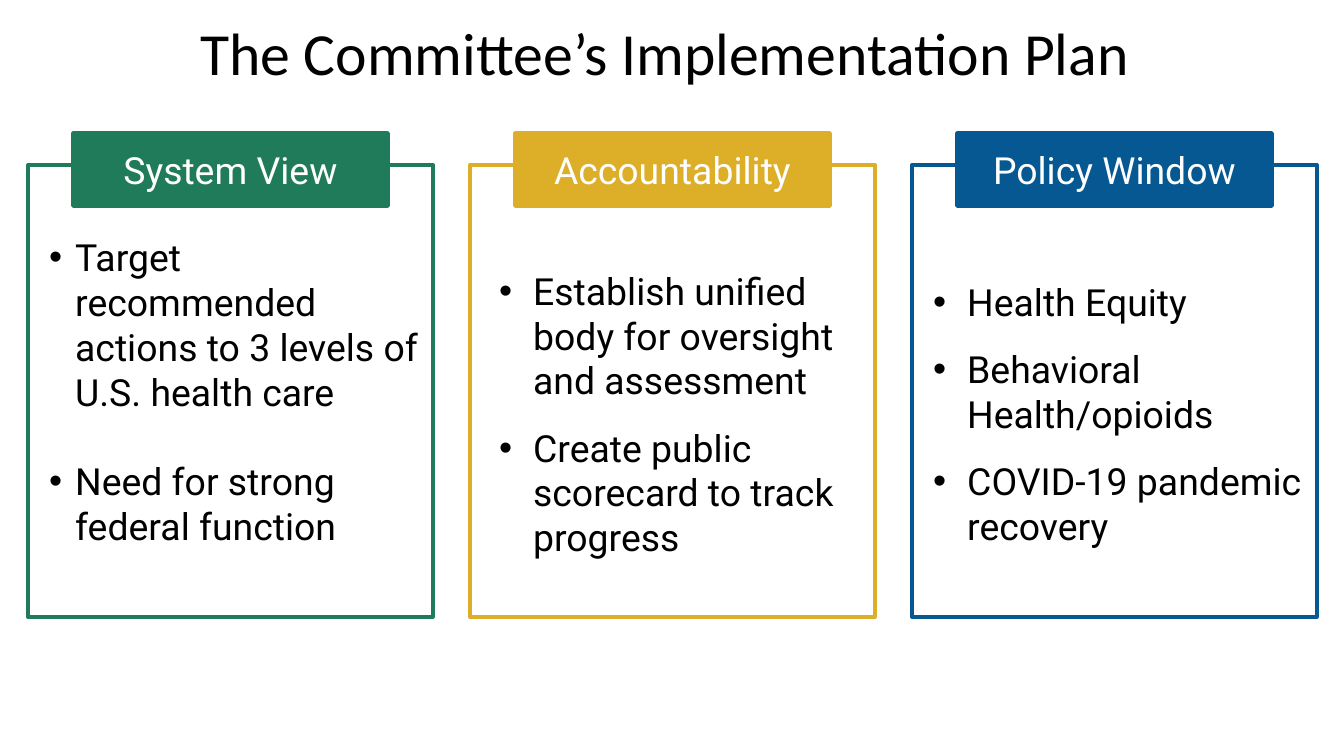
from lxml import etree
from pptx import Presentation
from pptx import util as u
from pptx.dml.color import RGBColor
from pptx.enum import shapes, text
from pptx.oxml.ns import qn

COLORS = {"green": "207B5B", "gold": "DDAE27", "blue": "065892",
          "black": "000000", "white": "FFFFFF"}
PX = 914400 / 134.4  # EMU per px


def px(n):
    return u.Emu(round(n * PX))


def add_box(left, top, width, height, color, filled):
    box = slide.shapes.add_shape(shapes.MSO_SHAPE.RECTANGLE,
                                 px(left), px(top), px(width), px(height))
    box.shadow.inherit = False
    if filled:
        box.fill.solid()
        box.fill.fore_color.rgb = RGBColor.from_string(COLORS[color])
    else:
        box.fill.background()
    box.line.color.rgb = RGBColor.from_string(COLORS[color])
    box.line.width = u.Pt(2)
    box.text_frame.word_wrap = True
    box.text_frame.vertical_anchor = text.MSO_ANCHOR.MIDDLE
    return box.text_frame


def style(paragraph, font, size, color, align):
    paragraph.alignment = align
    paragraph.font.name = font
    paragraph.font.size = u.Pt(size)
    paragraph.font.color.rgb = RGBColor.from_string(COLORS[color])


prs = Presentation()
prs.slide_width, prs.slide_height = px(1344), px(756)
slide = prs.slides.add_slide(prs.slide_layouts[5])

# Title
title = slide.shapes.title
title.left, title.top, title.width, title.height = px(60), px(11), px(1210), px(82)
title.text_frame.text = "The Committee’s Implementation Plan"
title.text_frame.auto_size = text.MSO_AUTO_SIZE.NONE
title.text_frame.vertical_anchor = text.MSO_ANCHOR.MIDDLE
style(title.text_frame.paragraphs[0], "Calibri", 32, "black", text.PP_ALIGN.CENTER)

# Heading, color, top inset, text indent, bullet hang, space after (pt), points
columns = [
    ("System View", "green", 7, 34, 26, 24,
     ["Target recommended actions to 3 levels of U.S. health care",
      "Need for strong federal function"]),
    ("Accountability", "gold", 52, 50, 34, 12,
     ["Establish unified body for oversight and assessment",
      "Create public scorecard to track progress"]),
    ("Policy Window", "blue", 52, 42, 34, 12,
     ["Health Equity", "Behavioral Health/opioids", "COVID-19 pandemic recovery"]),
]

for i, (heading, color, inset, indent, hang, gap, points) in enumerate(columns):
    left = 28 + 442 * i

    # Outlined frame with its bullet list
    frame = add_box(left, 165, 405, 452, color, False)
    frame.margin_top = px(inset)
    frame.text = "\n".join(points)
    for point in frame.paragraphs:
        props = point._p.get_or_add_pPr()
        props.set("marL", str(px(indent)))
        props.set("indent", str(-px(hang)))
        if point.text != points[-1]:
            point.space_after = u.Pt(gap)
        etree.SubElement(props, qn("a:buFont")).set("typeface", "Arial")
        etree.SubElement(props, qn("a:buChar")).set("char", "•")
        style(point, "Roboto", 20, "black", text.PP_ALIGN.LEFT)

    # Solid heading over the frame's top edge
    tab = add_box(left + 45, 133, 315, 73, color, True)
    tab.text = heading
    style(tab.paragraphs[0], "Roboto", 20, "white", text.PP_ALIGN.CENTER)

prs.save("out.pptx")
